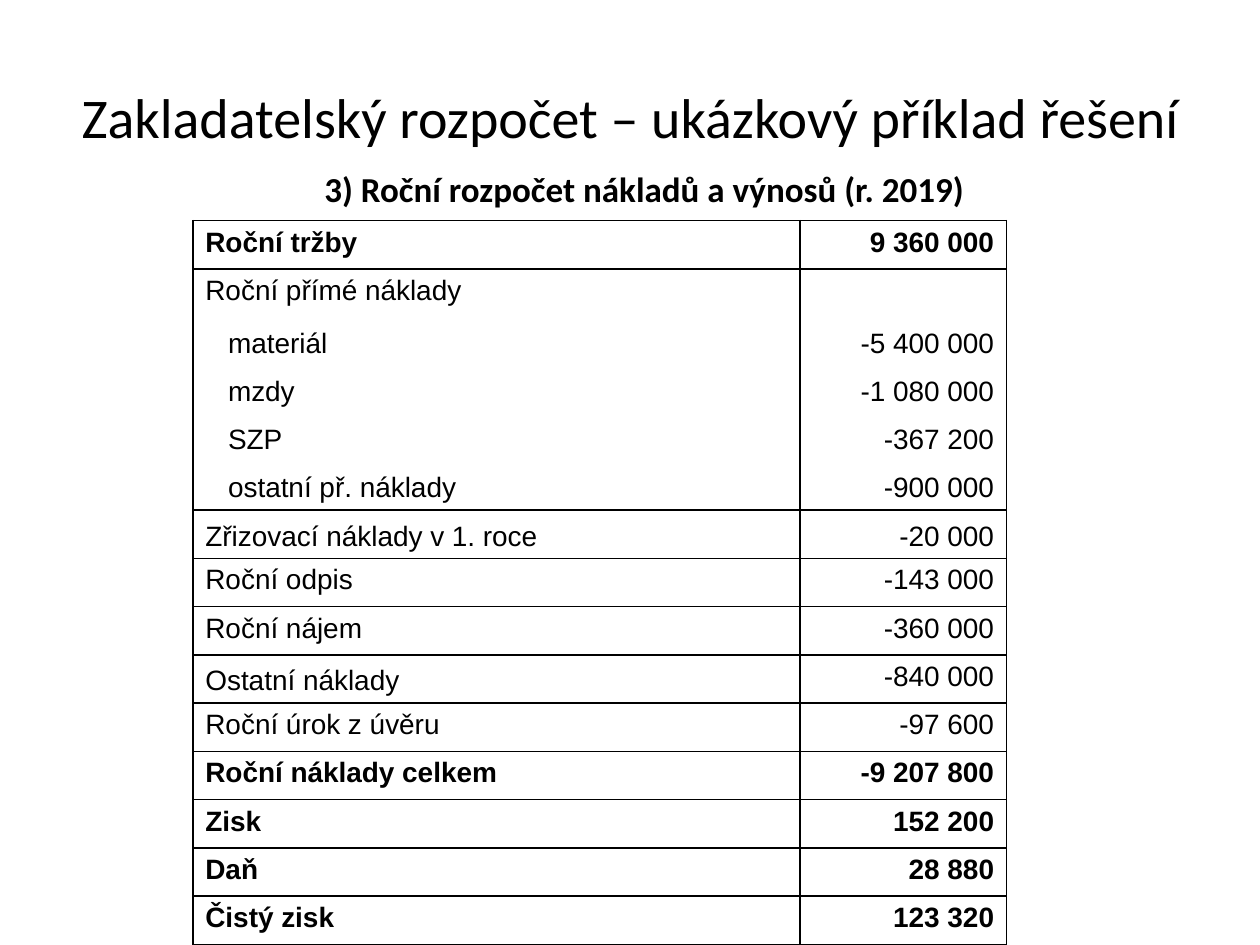
from lxml import etree
from pptx import Presentation
from pptx.dml.color import RGBColor
from pptx.enum.text import MSO_ANCHOR, MSO_AUTO_SIZE, PP_ALIGN
from pptx.oxml.ns import qn
from pptx.util import Inches, Pt

TOP, MID, LOW = MSO_ANCHOR.TOP, MSO_ANCHOR.MIDDLE, MSO_ANCHOR.BOTTOM
LEFT, CENTER, RIGHT = PP_ALIGN.LEFT, PP_ALIGN.CENTER, PP_ALIGN.RIGHT
NO_FIT = MSO_AUTO_SIZE.NONE
INK, PAPER = "000000", "FFFFFF"

# Label, amount, bold, label anchor, amount anchor
ROWS = [
    ("Roční tržby", "9 360 000", True, TOP, TOP),
    ("Roční přímé náklady", "", False, TOP, TOP),
    ("materiál", "-5 400 000", False, LOW, LOW),
    ("mzdy", "-1 080 000", False, LOW, LOW),
    ("SZP", "-367 200", False, LOW, LOW),
    ("ostatní př. náklady", "-900 000", False, LOW, LOW),
    ("Zřizovací náklady v 1. roce", "-20 000", False, LOW, LOW),
    ("Roční odpis", "-143 000", False, TOP, TOP),
    ("Roční nájem", "-360 000", False, TOP, TOP),
    ("Ostatní náklady", "-840 000", False, LOW, TOP),
    ("Roční úrok z úvěru", "-97 600", False, TOP, TOP),
    ("Roční náklady celkem", "-9 207 800", True, TOP, TOP),
    ("Zisk", "152 200", True, TOP, TOP),
    ("Daň", "28 880", True, TOP, TOP),
    ("Čistý zisk", "123 320", True, TOP, TOP),
]
FIRST, LAST = 1, 5  # rows of the direct cost group


def color(code):
    return RGBColor.from_string(code)


class Deck:
    def __init__(self, slide):
        self.slide = slide
        self.head, self.body = "Calibri", "Arial"

    def add_text(self, para, text, font, size, bold=False):
        run = para.add_run()
        run.text = text
        run.font.name, run.font.size, run.font.bold = font, Pt(size), bold
        run.font.color.rgb = color(INK)

    def holder(self, index, box, text, size, anchor, bold=False):
        shape = self.slide.placeholders[index]
        shape.left, shape.top, shape.width, shape.height = map(Inches, box)
        frame = shape.text_frame
        frame.word_wrap, frame.auto_size = True, NO_FIT
        frame.vertical_anchor = anchor
        para = frame.paragraphs[0]
        para.alignment, para.space_before = CENTER, Pt(0)
        etree.SubElement(para._p.get_or_add_pPr(), qn("a:buNone"))
        self.add_text(para, text, self.head, size, bold)
        return para

    def border(self, cell, sides):
        props = cell._tc.get_or_add_tcPr()
        for side in "LRTB":
            shown = side in sides
            line = etree.SubElement(props, qn(f"a:ln{side}"),
                                    w=str(Pt(1) if shown else 0))
            if shown:
                fill = etree.SubElement(line, qn("a:solidFill"))
                etree.SubElement(fill, qn("a:srgbClr"), val=INK)
            else:
                etree.SubElement(line, qn("a:noFill"))

    def cell(self, cell, text, bold, anchor, align, sides):
        self.border(cell, sides)
        cell.fill.solid()
        cell.fill.fore_color.rgb = color(PAPER)
        cell.vertical_anchor = anchor
        para = cell.text_frame.paragraphs[0]
        para.alignment = align
        if text:
            self.add_text(para, text, self.body, 16, bold)
        else:
            etree.SubElement(para._p, qn("a:endParaRPr"), sz="1600")

    def table(self, box, widths, rows):
        table = self.slide.shapes.add_table(
            len(rows), len(widths), *map(Inches, box)).table
        table.first_row = table.horz_banding = False
        for col, width in zip(table.columns, widths):
            col.width = Inches(width)
        for i, (label, amount, bold, left, right) in enumerate(rows):
            # The cost group has no lines between its rows
            sides = "LR"
            if not FIRST < i <= LAST:
                sides += "T"
            if not FIRST <= i < LAST:
                sides += "B"
            name = table.cell(i, 0)
            self.cell(name, label, bold, left, LEFT, sides)
            self.cell(table.cell(i, 1), amount, bold, right, RIGHT, sides)
            if FIRST < i <= LAST:
                name.margin_left = Inches(0.28)


def main():
    prs = Presentation()
    prs.slide_width, prs.slide_height = Inches(10), Inches(7.5)
    deck = Deck(prs.slides.add_slide(prs.slide_layouts[1]))

    # Title and subtitle
    title = deck.holder(0, (0.47, 0.52, 9.07, 0.99),
                        "Zakladatelský rozpočet – ukázkový příklad řešení",
                        32, MID)
    title.line_spacing = Pt(25)
    deck.holder(1, (0.5, 1.28, 9.23, 0.55),
                "3) Roční rozpočet nákladů a výnosů (r. 2019)",
                20, TOP, True)

    # Yearly budget
    deck.table((1.53, 1.75, 6.46, 5.75), (4.82, 1.64), ROWS)
    prs.save("out.pptx")


if __name__ == "__main__":
    main()
